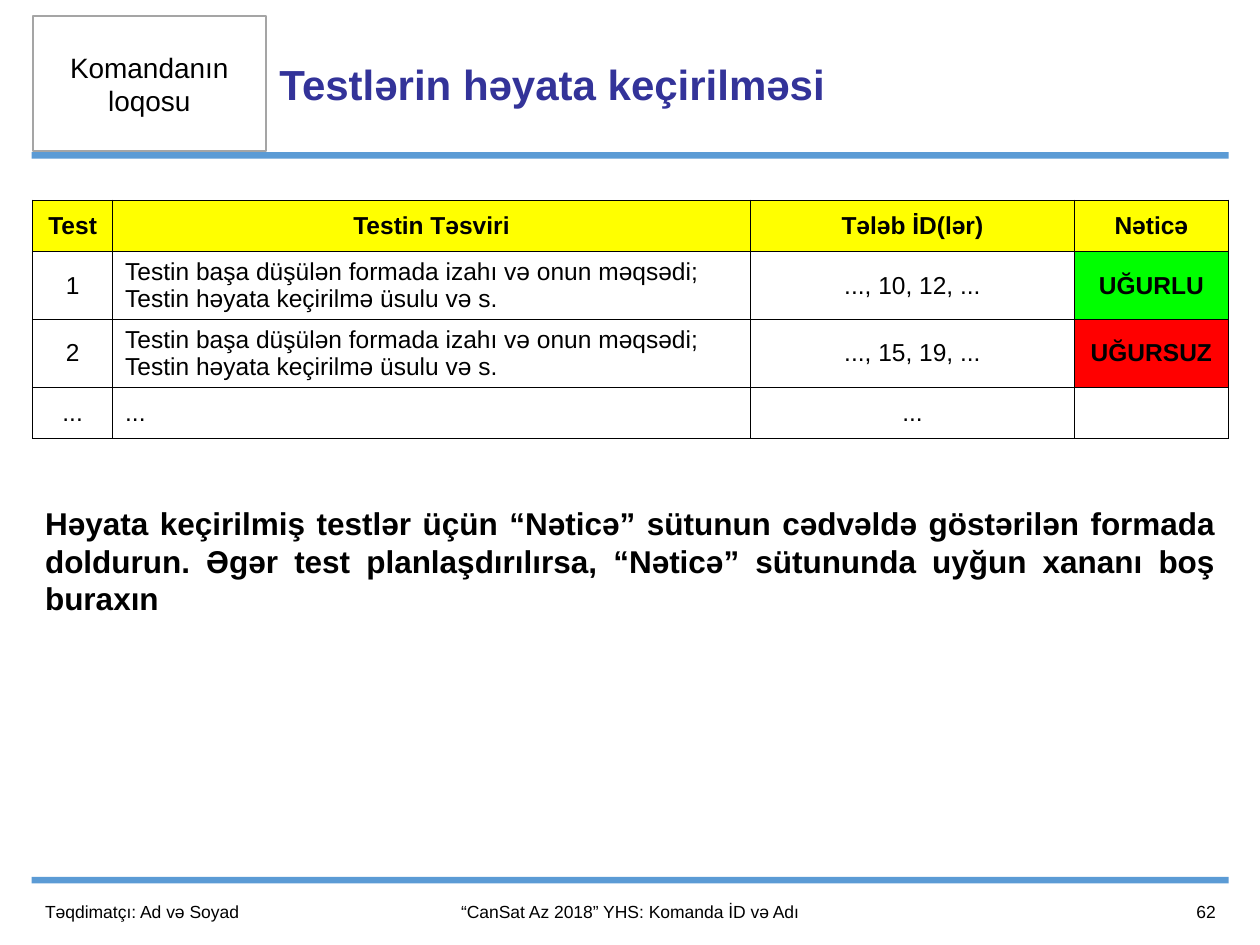
from lxml.etree import SubElement
from pptx import Presentation
from pptx.dml.color import RGBColor
from pptx.enum.shapes import MSO_SHAPE
from pptx.enum.text import MSO_ANCHOR, MSO_AUTO_SIZE, PP_ALIGN
from pptx.oxml.ns import qn
from pptx.util import Cm, Pt

BLACK = RGBColor(0x00, 0x00, 0x00)
WHITE = RGBColor(0xFF, 0xFF, 0xFF)
NAVY = RGBColor(0x33, 0x33, 0x99)
BLUE = RGBColor(0x5B, 0x9B, 0xD5)
GRAY = RGBColor(0xA5, 0xA5, 0xA5)
YELLOW = RGBColor(0xFF, 0xFF, 0x00)
GREEN = RGBColor(0x00, 0xFF, 0x00)
RED = RGBColor(0xFF, 0x00, 0x00)

FONT = "Arial"
LEFT, WIDTH = 0.66, 24.1  # content column, cm
FOOTER_TOP, FOOTER_HEIGHT = 17.86, 1.02

DESCRIPTION = ("Testin başa düşülən formada izahı və onun məqsədi;\n"
               "Testin həyata keçirilmə üsulu və s.")
COLUMN_WIDTHS = (1.61, 12.86, 6.53, 3.1)
ROW_HEIGHTS = (1.03, 1.37, 1.37, 1.03)
TEST_ROWS = (
    ("Test", "Testin Təsviri", "Tələb İD(lər)", "Nəticə"),
    ("1", DESCRIPTION, "..., 10, 12, ...", "UĞURLU"),
    ("2", DESCRIPTION, "..., 15, 19, ...", "UĞURSUZ"),
    ("...", "...", "...", ""),
)
RESULT_FILLS = {"UĞURLU": GREEN, "UĞURSUZ": RED}


def write_text(frame, text, size=14, color=BLACK, bold=False, align=PP_ALIGN.LEFT):
    """Fill a text frame, one paragraph per line of text."""
    for index, line in enumerate(text.split("\n")):
        paragraph = frame.add_paragraph() if index else frame.paragraphs[0]
        paragraph.alignment = align
        run = paragraph.add_run()
        run.text = line
        run.font.name = FONT
        run.font.size = Pt(size)
        run.font.bold = bold
        run.font.color.rgb = color


def add_rectangle(slide, left, top, width, height, fill, line=None):
    rectangle = slide.shapes.add_shape(
        MSO_SHAPE.RECTANGLE, Cm(left), Cm(top), Cm(width), Cm(height))
    rectangle.shadow.inherit = False
    rectangle.fill.solid()
    rectangle.fill.fore_color.rgb = fill
    if line is None:
        rectangle.line.fill.background()
    else:
        rectangle.line.color.rgb = line
        rectangle.line.width = Pt(1)
    return rectangle


def add_label(slide, left, top, width, height, text,
              anchor=MSO_ANCHOR.MIDDLE, **text_format):
    frame = slide.shapes.add_textbox(
        Cm(left), Cm(top), Cm(width), Cm(height)).text_frame
    frame.word_wrap = True
    frame.vertical_anchor = anchor
    write_text(frame, text, **text_format)


def set_title(slide, text):
    title = slide.shapes.title
    title.left, title.top = Cm(5.38), Cm(0.33)
    title.width, title.height = Cm(15.24), Cm(2.7)
    title.text_frame.auto_size = MSO_AUTO_SIZE.NONE
    title.text_frame.vertical_anchor = MSO_ANCHOR.MIDDLE
    write_text(title.text_frame, text, size=24, color=NAVY, bold=True)


def set_borders(cell):
    """Give all four sides a thin black line, ahead of the cell's fill."""
    properties = cell._tc.get_or_add_tcPr()
    for side in ("a:lnL", "a:lnR", "a:lnT", "a:lnB"):
        border = SubElement(properties, qn(side), w=str(Pt(1)))
        SubElement(SubElement(border, qn("a:solidFill")),
                   qn("a:srgbClr"), val=str(BLACK))


def add_test_table(slide):
    table = slide.shapes.add_table(
        len(TEST_ROWS), len(COLUMN_WIDTHS), Cm(LEFT), Cm(4.04),
        Cm(WIDTH), Cm(sum(ROW_HEIGHTS))).table
    table.first_row = table.horz_banding = False
    for column, width in zip(table.columns, COLUMN_WIDTHS):
        column.width = Cm(width)
    for r, (values, height) in enumerate(zip(TEST_ROWS, ROW_HEIGHTS)):
        table.rows[r].height = Cm(height)
        is_header = r == 0
        for c, value in enumerate(values):
            cell = table.cell(r, c)
            set_borders(cell)
            cell.fill.solid()
            cell.fill.fore_color.rgb = (
                YELLOW if is_header else RESULT_FILLS.get(value, WHITE))
            cell.vertical_anchor = MSO_ANCHOR.MIDDLE
            is_description = c == 1 and not is_header
            if value:
                write_text(cell.text_frame, value,
                           bold=is_header or value in RESULT_FILLS,
                           align=PP_ALIGN.LEFT if is_description else PP_ALIGN.CENTER)


def main():
    presentation = Presentation()
    presentation.slide_width, presentation.slide_height = Cm(25.4), Cm(19.05)
    slide = presentation.slides.add_slide(presentation.slide_layouts[5])

    # Header and footer bars
    for top in (3.07, 17.68):
        add_rectangle(slide, 0.64, top, 24.13, 0.13, BLUE)

    # Team logo box and title
    logo_box = add_rectangle(slide, LEFT, 0.33, 4.7, 2.72, WHITE, line=GRAY)
    write_text(logo_box.text_frame, "Komandanın loqosu",
               size=16, align=PP_ALIGN.CENTER)
    set_title(slide, "Testlərin həyata keçirilməsi")

    # Test results and instruction
    add_test_table(slide)
    add_label(slide, LEFT, 10.03, WIDTH, 2.57,
              "Həyata keçirilmiş testlər üçün “Nəticə” sütunun cədvəldə "
              "göstərilən formada doldurun. Əgər test planlaşdırılırsa, "
              "“Nəticə” sütununda uyğun xananı boş buraxın",
              anchor=MSO_ANCHOR.TOP, size=18, bold=True, align=PP_ALIGN.JUSTIFY)

    # Footer
    for left, width, text, align in (
        (LEFT, 6.07, "Təqdimatçı: Ad və Soyad", PP_ALIGN.LEFT),
        (6.73, 11.94, "“CanSat Az 2018” YHS: Komanda İD və Adı", PP_ALIGN.CENTER),
        (22.22, 2.54, "62", PP_ALIGN.RIGHT),
    ):
        add_label(slide, left, FOOTER_TOP, width, FOOTER_HEIGHT, text,
                  size=10, align=align)

    presentation.save("out.pptx")


if __name__ == "__main__":
    main()
